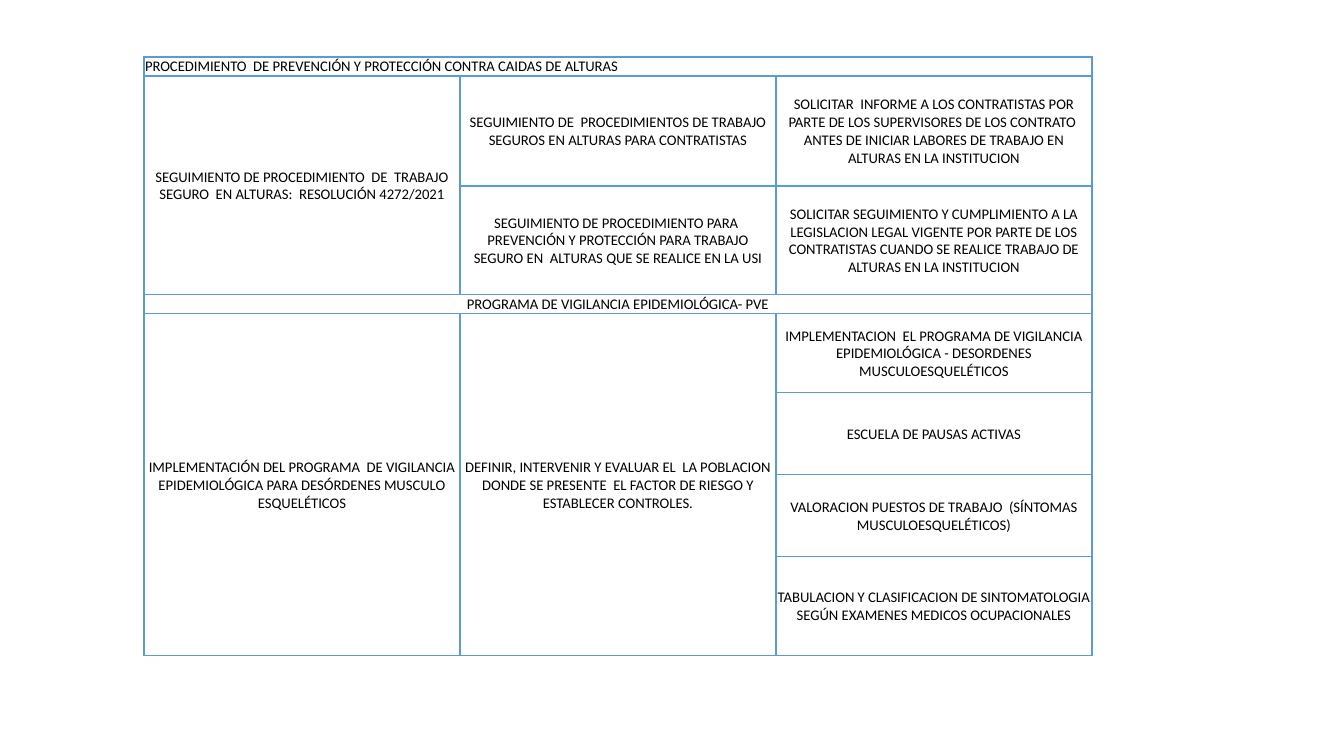
from lxml.etree import SubElement
from pptx import Presentation
from pptx.dml.color import RGBColor
from pptx.enum.text import MSO_ANCHOR, PP_ALIGN
from pptx.oxml.ns import qn
from pptx.util import Emu, Pt

PX = 9071.43
COLORS = {"ink": "000000", "rule": "5B9BD5"}
ROWS = [19, 110, 109, 19, 79, 82, 82, 99]
COLS = 3
CELLS = [
    (0, 0, 1, 3, "PROCEDIMIENTO  DE PREVENCIÓN Y PROTECCIÓN CONTRA CAIDAS DE ALTURAS"),
    (1, 0, 2, 1, "SEGUIMIENTO DE PROCEDIMIENTO  DE  TRABAJO SEGURO  EN ALTURAS:  RESOLUCIÓN 4272/2021"),
    (1, 1, 1, 1, "SEGUIMIENTO DE  PROCEDIMIENTOS DE TRABAJO SEGUROS EN ALTURAS PARA CONTRATISTAS"),
    (1, 2, 1, 1, "SOLICITAR  INFORME A LOS CONTRATISTAS POR PARTE DE LOS SUPERVISORES DE LOS CONTRATO  "
                 "ANTES DE INICIAR LABORES DE TRABAJO EN ALTURAS EN LA INSTITUCION"),
    (2, 1, 1, 1, "SEGUIMIENTO DE PROCEDIMIENTO PARA  PREVENCIÓN Y PROTECCIÓN PARA TRABAJO SEGURO "
                 "EN  ALTURAS QUE SE REALICE EN LA USI"),
    (2, 2, 1, 1, "SOLICITAR SEGUIMIENTO Y CUMPLIMIENTO A LA LEGISLACION LEGAL VIGENTE POR PARTE DE LOS "
                 "CONTRATISTAS CUANDO SE REALICE TRABAJO DE ALTURAS EN LA INSTITUCION"),
    (3, 0, 1, 3, "PROGRAMA DE VIGILANCIA EPIDEMIOLÓGICA- PVE"),
    (4, 0, 4, 1, "IMPLEMENTACIÓN DEL PROGRAMA  DE VIGILANCIA EPIDEMIOLÓGICA PARA DESÓRDENES MUSCULO ESQUELÉTICOS"),
    (4, 1, 4, 1, "DEFINIR, INTERVENIR Y EVALUAR EL  LA POBLACION DONDE SE PRESENTE  EL FACTOR DE RIESGO Y "
                 "ESTABLECER CONTROLES."),
    (4, 2, 1, 1, "IMPLEMENTACION  EL PROGRAMA DE VIGILANCIA EPIDEMIOLÓGICA - DESORDENES MUSCULOESQUELÉTICOS"),
    (5, 2, 1, 1, "ESCUELA DE PAUSAS ACTIVAS"),
    (6, 2, 1, 1, "VALORACION PUESTOS DE TRABAJO  (SÍNTOMAS MUSCULOESQUELÉTICOS)"),
    (7, 2, 1, 1, "TABULACION Y CLASIFICACION DE SINTOMATOLOGIA SEGÚN EXAMENES MEDICOS OCUPACIONALES"),
]


def px(count):
    """Turn pixels into EMU."""
    return Emu(round(count * PX))


def frame(cell):
    """Rule all four sides of a cell and clear its fill."""
    props = cell._tc.get_or_add_tcPr()
    for side in ("lnL", "lnR", "lnT", "lnB"):
        line = SubElement(props, qn(f"a:{side}"), w=str(Pt(1)))
        fill = SubElement(line, qn("a:solidFill"))
        SubElement(fill, qn("a:srgbClr"), val=COLORS["rule"])
    cell.fill.background()
    cell.margin_left = cell.margin_right = cell.margin_top = px(1)
    cell.margin_bottom = 0
    cell.vertical_anchor = MSO_ANCHOR.MIDDLE


def write(cell, text, align):
    """Put formatted text into a cell."""
    para = cell.text_frame.paragraphs[0]
    para.text = text
    para.alignment = align
    font = para.runs[0].font
    font.name, font.size, font.bold = "Calibri", Pt(10.5), False
    font.color.rgb = RGBColor.from_string(COLORS["ink"])


def add_plan(slide, left, top, width):
    """Draw the plan table in the given box."""
    shape = slide.shapes.add_table(len(ROWS), COLS, px(left), px(top), px(width), px(sum(ROWS)))
    table = shape.table
    table.first_row = table.horz_banding = False
    for col in table.columns:
        col.width = px(width / COLS)
    for row, height in zip(table.rows, ROWS):
        row.height = px(height)
    for cell in table.iter_cells():
        frame(cell)
    for row, col, down, over, text in CELLS:
        cell = table.cell(row, col)
        if down * over > 1:
            cell.merge(table.cell(row + down - 1, col + over - 1))
        write(cell, text, PP_ALIGN.CENTER if row else PP_ALIGN.LEFT)


def main():
    """Build and save the deck."""
    deck = Presentation()
    deck.slide_width, deck.slide_height = px(1344), px(756)
    slide = deck.slides.add_slide(deck.slide_layouts[6])
    add_plan(slide, 144, 57, 948)
    deck.save("out.pptx")


if __name__ == "__main__":
    main()
